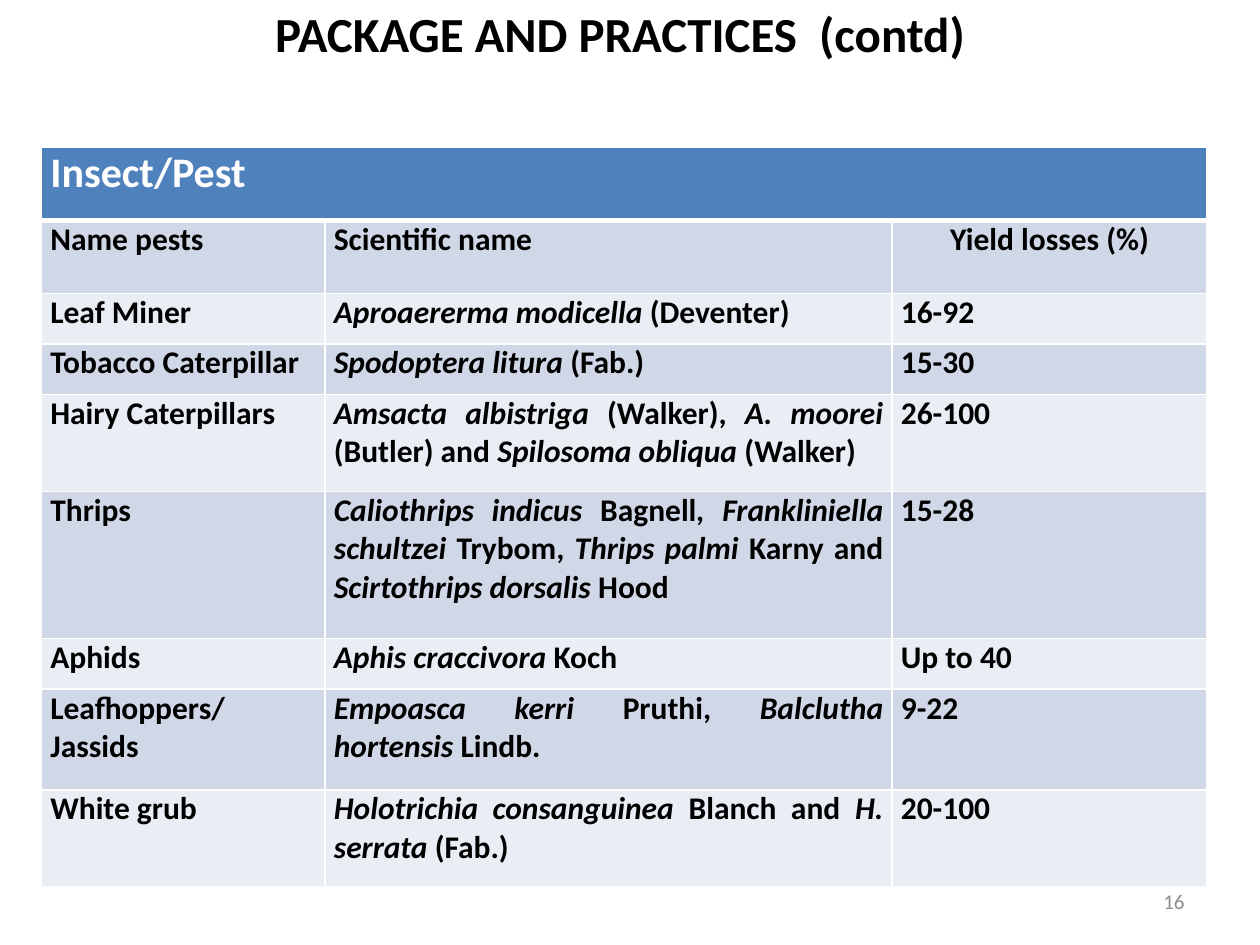
import pptx
import pptx.dml.color
import pptx.enum.text
import pptx.util
from lxml import etree
from pptx.oxml.ns import qn

Inches, Pt = pptx.util.Inches, pptx.util.Pt
RGBColor = pptx.dml.color.RGBColor
Align = pptx.enum.text.PP_ALIGN
Anchor = pptx.enum.text.MSO_ANCHOR

BLACK = RGBColor(0x00, 0x00, 0x00)
WHITE = RGBColor(0xFF, 0xFF, 0xFF)
GREY = RGBColor(0x8C, 0x8C, 0x8C)
HEADER_BLUE = RGBColor(0x4F, 0x81, 0xBD)
BANDS = [RGBColor(0xD0, 0xD8, 0xE8), RGBColor(0xE9, 0xED, 0xF4)]
FONT = "Calibri"

TITLE = "PACKAGE AND PRACTICES  (contd)"
TABLE_TITLE = "Insect/Pest"
COLUMN_NAMES = ["Name pests", "Scientific name", "Yield losses (%)"]
# Lines of the pest name, scientific name in alternating italic and upright
# pieces, yield loss.
PESTS = [
    (["Leaf Miner"], ["Aproaererma modicella", " (Deventer)"], "16-92"),
    (["Tobacco Caterpillar"], ["Spodoptera litura ", "(Fab.)"], "15-30"),
    (["Hairy Caterpillars"],
     ["Amsacta albistriga", " (Walker), ", "A. moorei", " (Butler) and ",
      "Spilosoma obliqua", " (Walker)"], "26-100"),
    (["Thrips"],
     ["Caliothrips indicus ", "Bagnell", ", Frankliniella schultzei ", "Trybom, ",
      "Thrips palmi ", "Karny and ", "Scirtothrips dorsalis", " Hood"], "15-28"),
    (["Aphids"], ["Aphis craccivora", " Koch"], "Up to 40"),
    (["Leafhoppers/", "Jassids"],
     ["Empoasca kerri ", "Pruthi, ", "Balclutha hortensis ", "Lindb."], "9-22"),
    (["White grub"],
     ["Holotrichia consanguinea ", "Blanch and ", "H. serrata", " (Fab.)"], "20-100"),
]
COLUMN_WIDTHS = [2.25, 4.5, 2.5]
ROW_HEIGHTS = [0.58, 0.58, 0.4, 0.4, 0.77, 1.17, 0.4, 0.8, 0.77]


def add_span(para, text, size, color=BLACK, bold=True, italic=False):
    span = para.add_run()
    span.text = text
    font = span.font
    font.name, font.size, font.bold, font.italic = FONT, Pt(size), bold, italic
    font.color.rgb = color


def add_border(cell, side, width):
    properties = cell._tc.get_or_add_tcPr()
    line = etree.SubElement(properties, qn("a:ln" + side), w=str(Pt(width)))
    fill = etree.SubElement(line, qn("a:solidFill"))
    etree.SubElement(fill, qn("a:srgbClr"), val=str(WHITE))


def style_cell(cell, row):
    for side in "LRTB":
        touches_header = (row, side) in [(0, "B"), (1, "T")]
        add_border(cell, side, 3 if touches_header else 1)
    cell.fill.solid()
    cell.fill.fore_color.rgb = BANDS[(row - 1) % 2] if row else HEADER_BLUE
    cell.margin_left = cell.margin_right = Inches(0.07)
    cell.margin_top = cell.margin_bottom = 0


def write_lines(cell, lines, align=Align.LEFT):
    for index, text in enumerate(lines):
        frame = cell.text_frame
        para = frame.add_paragraph() if index else frame.paragraphs[0]
        para.alignment = align
        add_span(para, text, 18)


def add_pest_table(slide):
    table = slide.shapes.add_table(
        len(ROW_HEIGHTS), len(COLUMN_WIDTHS), Inches(0.33), Inches(1.17),
        Inches(sum(COLUMN_WIDTHS)), Inches(sum(ROW_HEIGHTS))).table
    for column, width in zip(table.columns, COLUMN_WIDTHS):
        column.width = Inches(width)
    for index, (row, height) in enumerate(zip(table.rows, ROW_HEIGHTS)):
        row.height = Inches(height)
        for cell in row.cells:
            style_cell(cell, index)

    heading = table.cell(0, 0)
    heading.merge(table.cell(0, len(COLUMN_WIDTHS) - 1))
    add_span(heading.text_frame.paragraphs[0], TABLE_TITLE, 24, WHITE)

    for column, name in enumerate(COLUMN_NAMES):
        align = Align.CENTER if column == 2 else Align.LEFT
        write_lines(table.cell(1, column), [name], align)

    for row, (names, species, loss) in enumerate(PESTS, start=2):
        write_lines(table.cell(row, 0), names)
        para = table.cell(row, 1).text_frame.paragraphs[0]
        para.alignment = Align.JUSTIFY
        for index, piece in enumerate(species):
            add_span(para, piece, 18, italic=index % 2 == 0)
        write_lines(table.cell(row, 2), [loss])


def add_title(slide):
    title = slide.shapes.title
    title.left, title.top = Inches(0.42), Inches(0)
    title.width, title.height = Inches(9), Inches(1)
    frame = title.text_frame
    frame.vertical_anchor = Anchor.TOP
    frame.margin_top = Inches(0.03)
    para = frame.paragraphs[0]
    para.alignment = Align.CENTER
    add_span(para, TITLE, 28)


def add_page_number(slide):
    box = slide.shapes.add_textbox(Inches(7.17), Inches(6.95), Inches(2.33), Inches(0.4))
    frame = box.text_frame
    frame.word_wrap = True
    frame.vertical_anchor = Anchor.MIDDLE
    para = frame.paragraphs[0]
    para.alignment = Align.RIGHT
    add_span(para, "16", 12, GREY, bold=False)


def main():
    deck = pptx.Presentation()
    deck.slide_width, deck.slide_height = Inches(10), Inches(7.5)
    slide = deck.slides.add_slide(deck.slide_layouts[5])
    add_title(slide)
    add_pest_table(slide)
    add_page_number(slide)
    deck.save("out.pptx")


if __name__ == "__main__":
    main()
